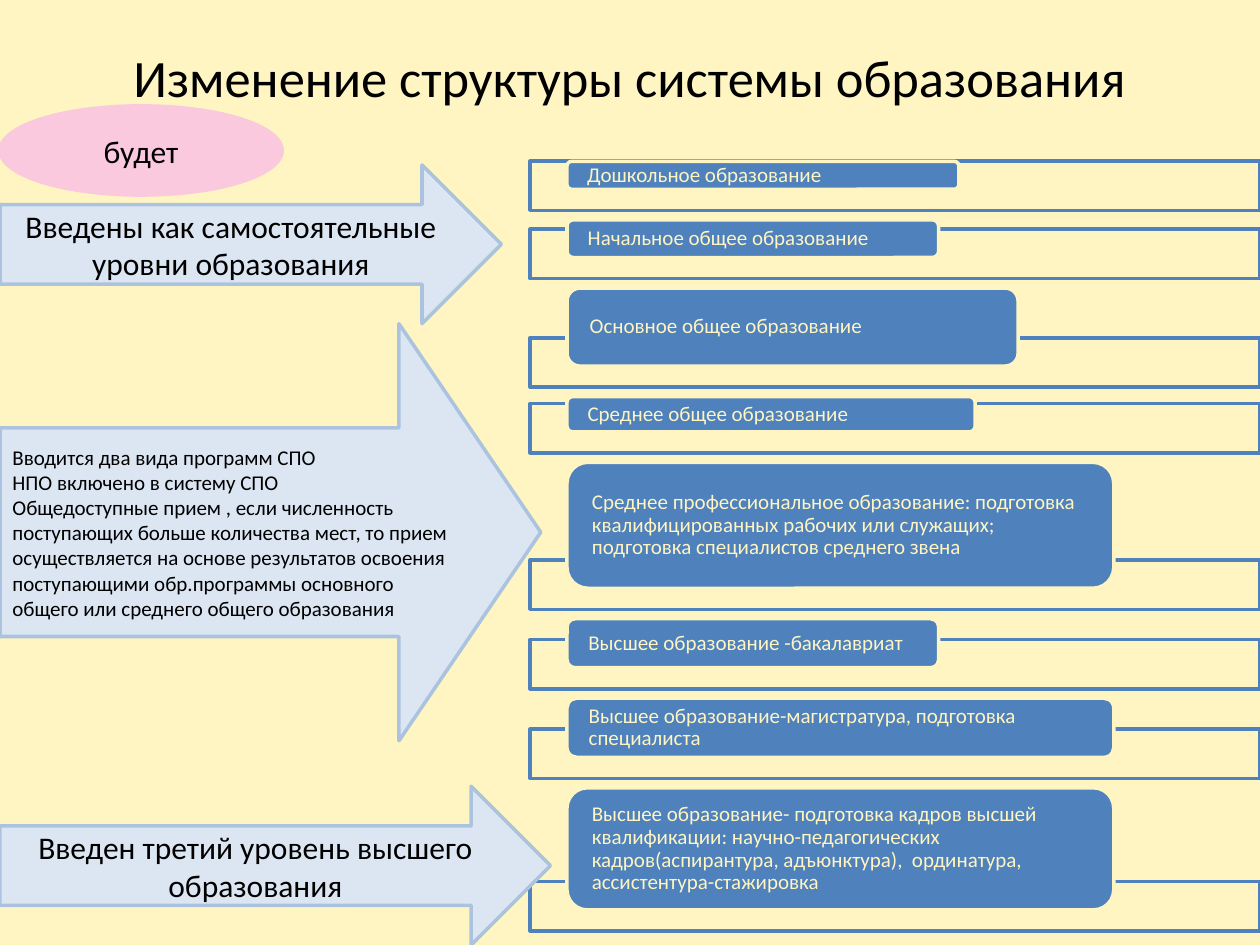
import pptx
import pptx.dml.color
import pptx.enum.shapes
import pptx.enum.text
import pptx.oxml.ns
import pptx.util
from lxml import etree

Pt = pptx.util.Pt
SHAPE = pptx.enum.shapes.MSO_SHAPE
ALIGN = pptx.enum.text.PP_ALIGN
COLORS = {
    "cream": "FEF5C2",
    "blue": "4F81BD",
    "pale": "DCE6F2",
    "edge": "ABC3DF",
    "pink": "FBC9DE",
    "black": "000000",
}

# Label, width and height of each pill
LEVELS = [
    ("Дошкольное образование", 224, 16),
    ("Начальное общее образование", 212.4, 21.6),
    ("Основное общее образование", 257.8, 44.6),
    ("Среднее общее образование", 233.3, 20.2),
    ("Среднее профессиональное образование: подготовка квалифицированных "
     "рабочих или служащих; подготовка специалистов среднего звена", 312.5, 72),
    ("Высшее образование -бакалавриат", 212.4, 28),
    ("Высшее образование-магистратура, подготовка специалиста", 312.5, 33.8),
    ("Высшее образование- подготовка кадров высшей квалификации: "
     "научно-педагогических кадров(аспирантура, адъюнктура),  ординатура, "
     "ассистентура-стажировка", 312.5, 69.8),
]
LEVELS_TOP = 92.2
FRAME_H = 28.2
FRAME_OVERLAP = 16.2  # how far a pill reaches down into its frame
PILL_GAP = 17.4

COLLEGE_NOTES = [
    "Вводится два вида программ СПО",
    "НПО включено в систему СПО",
    "Общедоступные прием , если численность поступающих больше количества "
    "мест, то прием осуществляется на основе результатов освоения "
    "поступающими обр.программы основного общего или среднего общего "
    "образования",
]


def rgb(name):
    return pptx.dml.color.RGBColor.from_string(COLORS[name])


def write(tf, *lines, size=18, color="black", align=ALIGN.CENTER,
          spacing=None, inset=None):
    """Fill a text frame with one paragraph per line."""
    tf.word_wrap = True
    tf.vertical_anchor = pptx.enum.text.MSO_ANCHOR.MIDDLE
    if inset is not None:
        tf.margin_left = tf.margin_right = Pt(inset)
        tf.margin_top = tf.margin_bottom = 0
    for i, line in enumerate(lines):
        p = tf.add_paragraph() if i else tf.paragraphs[0]
        p.alignment = align
        p.line_spacing = spacing
        r = p.add_run()
        r.text = line
        r.font.name = "Calibri"
        r.font.size = Pt(size)
        r.font.color.rgb = rgb(color)


class Deck:
    """Shared style and the slide being built."""

    line_width = 2

    def __init__(self, width, height):
        self.prs = pptx.Presentation()
        self.prs.slide_width, self.prs.slide_height = Pt(width), Pt(height)
        self.s = None

    def slide(self, background):
        self.s = self.prs.slides.add_slide(self.prs.slide_layouts[5])
        fill = self.s.background.fill
        fill.solid()
        fill.fore_color.rgb = rgb(background)

    def title(self, text, x, y, w, h):
        sp = self.s.shapes.title
        sp.left, sp.top, sp.width, sp.height = map(Pt, (x, y, w, h))
        write(sp.text_frame, text, size=30)

    def shape(self, kind, x, y, w, h, fill, line):
        sp = self.s.shapes.add_shape(kind, *map(Pt, (x, y, w, h)))
        sp.shadow.inherit = False
        sp.fill.solid()
        sp.fill.fore_color.rgb = rgb(fill)
        sp.line.color.rgb = rgb(line)
        sp.line.width = Pt(self.line_width)
        return sp

    def frame(self, y):
        sp = self.shape(SHAPE.RECTANGLE, 303, y, 417, FRAME_H, "cream", "blue")
        qn = pptx.oxml.ns.qn
        color = sp.fill._xPr.find(qn("a:solidFill")).find(qn("a:srgbClr"))
        etree.SubElement(color, qn("a:alpha"), val="90000")

    def pill(self, text, y, w, h):
        sp = self.shape(SHAPE.ROUNDED_RECTANGLE, 324, y, w, h, "blue", "cream")
        write(sp.text_frame, text, size=12, color="cream", align=ALIGN.LEFT,
              spacing=0.9, inset=10.8)

    def arrow(self, y, w, h, *lines, head=0.5, **text_format):
        sp = self.shape(SHAPE.RIGHT_ARROW, 0, y, w, h, "pale", "edge")
        sp.adjustments[1] = head
        write(sp.text_frame, *lines, **text_format)

    def oval(self, text, x, y, w, h):
        sp = self.shape(SHAPE.OVAL, x, y, w, h, "pink", "pink")
        write(sp.text_frame, text)


def main():
    deck = Deck(720, 540)
    deck.slide("cream")
    deck.title("Изменение структуры системы образования", 36, 21.6, 648, 44)

    y = LEVELS_TOP
    for text, w, h in LEVELS:
        deck.frame(y + h - FRAME_OVERLAP)
        deck.pill(text, y, w, h)
        y += h + PILL_GAP

    deck.arrow(94.3, 286.5, 90.7,
               "Введены как самостоятельные уровни образования")
    deck.arrow(185, 309, 238.3, *COLLEGE_NOTES, head=0.34, size=12,
               align=ALIGN.LEFT)
    deck.arrow(449.3, 314.6, 90.7, "Введен третий уровень высшего образования")
    deck.oval("будет", 0, 60.5, 161.3, 51)

    deck.prs.save("out.pptx")


if __name__ == "__main__":
    main()
